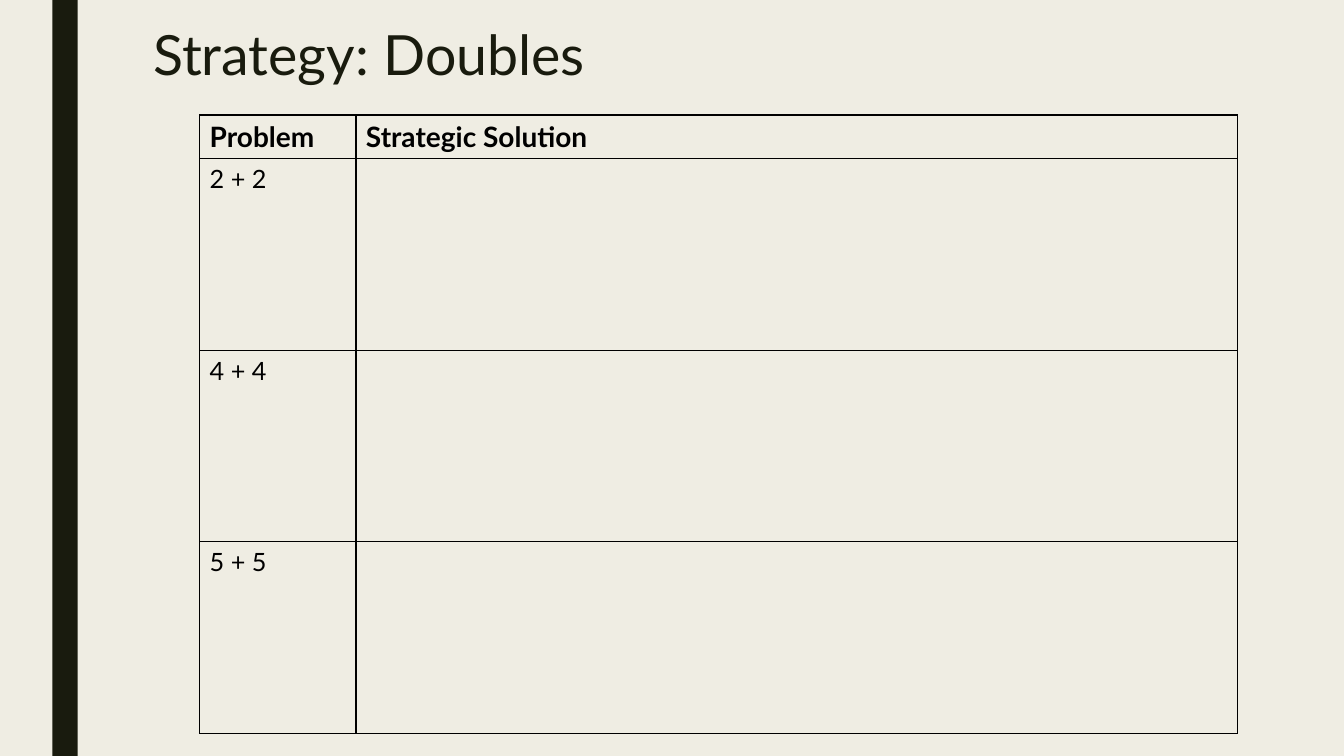
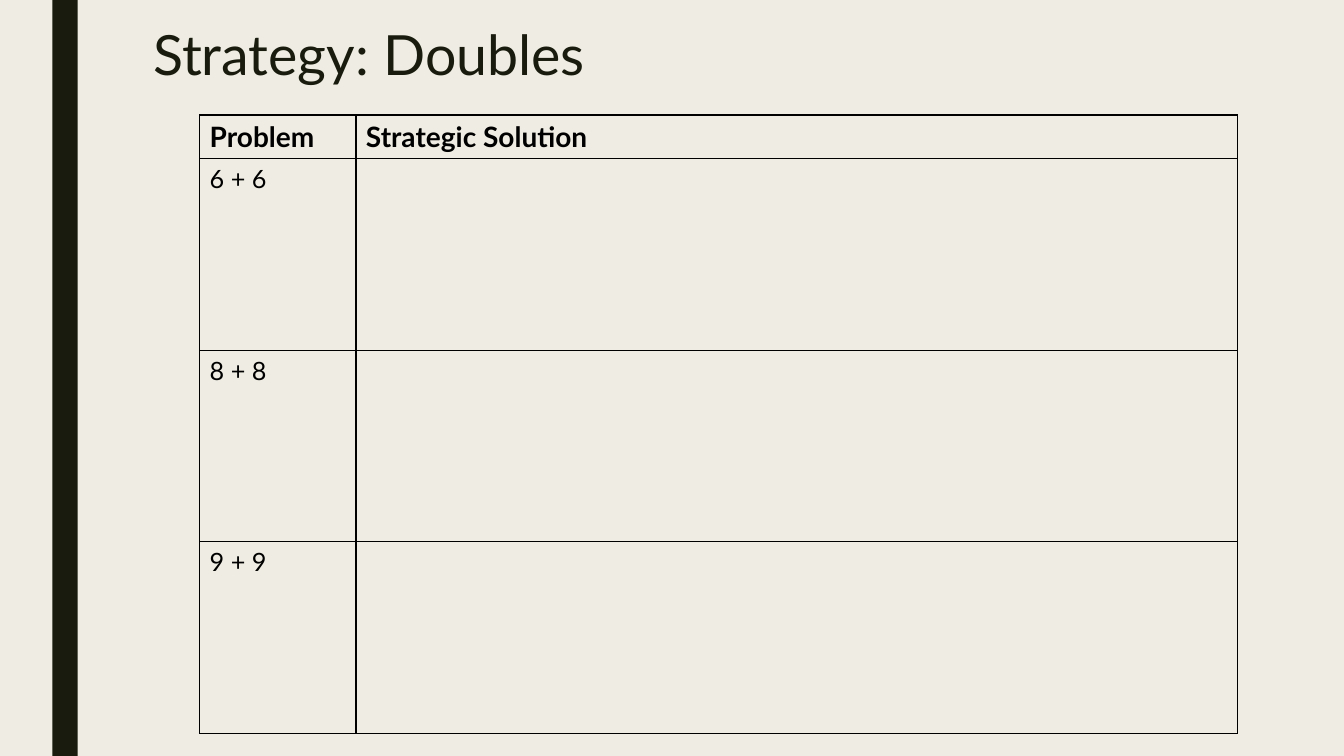
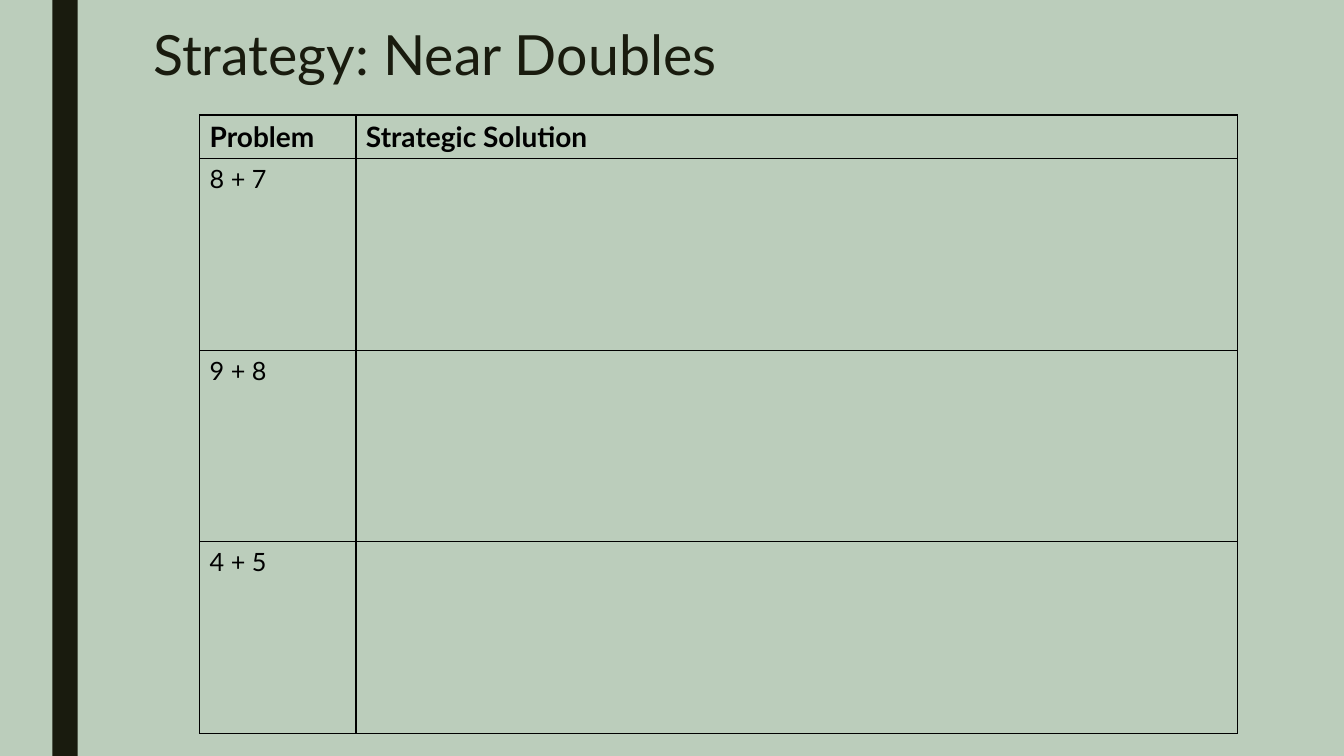
"""Build three addition-strategy worksheets, each with a problem and solution table."""
from lxml import etree
from pptx import Presentation
from pptx import util as u
from pptx.dml.color import RGBColor
from pptx.enum import shapes, text
from pptx.oxml.ns import qn

DARK, BLACK, CREAM, SAGE = "191B0E", "000000", "EFEDE3", "BBCDBB"
FONT = "Lato"
HEADINGS = ["Problem", "Strategic Solution"]
COLUMN_WIDTHS = [1.55, 8.74]
ROW_HEIGHTS = [0.43] + [1.9] * 3
WORKSHEETS = [
    ("Strategy: Doubles", CREAM, ["2 + 2", "4 + 4", "5 + 5"]),
    ("Strategy: Doubles", CREAM, ["6 + 6", "8 + 8", "9 + 9"]),
    ("Strategy: Near Doubles", SAGE, ["8 + 7", "9 + 8", "4 + 5"]),
]


def paint(fill, colour):
    fill.solid()
    fill.fore_color.rgb = RGBColor.from_string(colour)


def write(frame, words, size, colour, bold=False):
    run = frame.paragraphs[0].add_run()
    run.text = words
    run.font.name, run.font.size, run.font.bold = FONT, u.Pt(size), bold
    paint(run.font.fill, colour)


deck = Presentation()
deck.slide_width, deck.slide_height = u.Inches(13.33), u.Inches(7.5)

for heading, backdrop, problems in WORKSHEETS:
    slide = deck.slides.add_slide(deck.slide_layouts[5])
    paint(slide.background.fill, backdrop)

    band = slide.shapes.add_shape(
        shapes.MSO_SHAPE.RECTANGLE, u.Inches(0.52), 0, u.Inches(0.25), deck.slide_height)
    band.shadow.inherit = False
    paint(band.fill, DARK)
    band.line.fill.background()

    title = slide.shapes.title
    title.left, title.top = u.Inches(1.42), u.Inches(0.23)
    title.width, title.height = u.Inches(10.5), u.Inches(0.75)
    title.text_frame.word_wrap = True
    title.text_frame.auto_size = text.MSO_AUTO_SIZE.NONE
    title.text_frame.vertical_anchor = text.MSO_ANCHOR.TOP
    write(title.text_frame, heading, 39.6, DARK)
    title.text_frame.paragraphs[0].alignment = text.PP_ALIGN.LEFT
    title.text_frame.paragraphs[0].line_spacing = 0.89

    worksheet = slide.shapes.add_table(
        len(ROW_HEIGHTS), len(COLUMN_WIDTHS), u.Inches(1.98), u.Inches(1.14),
        u.Inches(sum(COLUMN_WIDTHS)), u.Inches(sum(ROW_HEIGHTS))).table
    worksheet.first_row = worksheet.horz_banding = False
    for column, width in zip(worksheet.columns, COLUMN_WIDTHS):
        column.width = u.Inches(width)
    for row, height in zip(worksheet.rows, ROW_HEIGHTS):
        row.height = u.Inches(height)

    for cell in worksheet.iter_cells():
        properties = cell._tc.get_or_add_tcPr()
        for side in ("a:lnL", "a:lnR", "a:lnT", "a:lnB"):
            border = etree.SubElement(properties, qn(side), w=str(u.Pt(1)))
            ink = etree.SubElement(border, qn("a:solidFill"))
            etree.SubElement(ink, qn("a:srgbClr"), val=BLACK)
        cell.fill.background()

    for index, label in enumerate(HEADINGS):
        write(worksheet.cell(0, index).text_frame, label, 20, BLACK, bold=True)
    for index, problem in enumerate(problems, start=1):
        write(worksheet.cell(index, 0).text_frame, problem, 18, BLACK)

deck.save("out.pptx")
